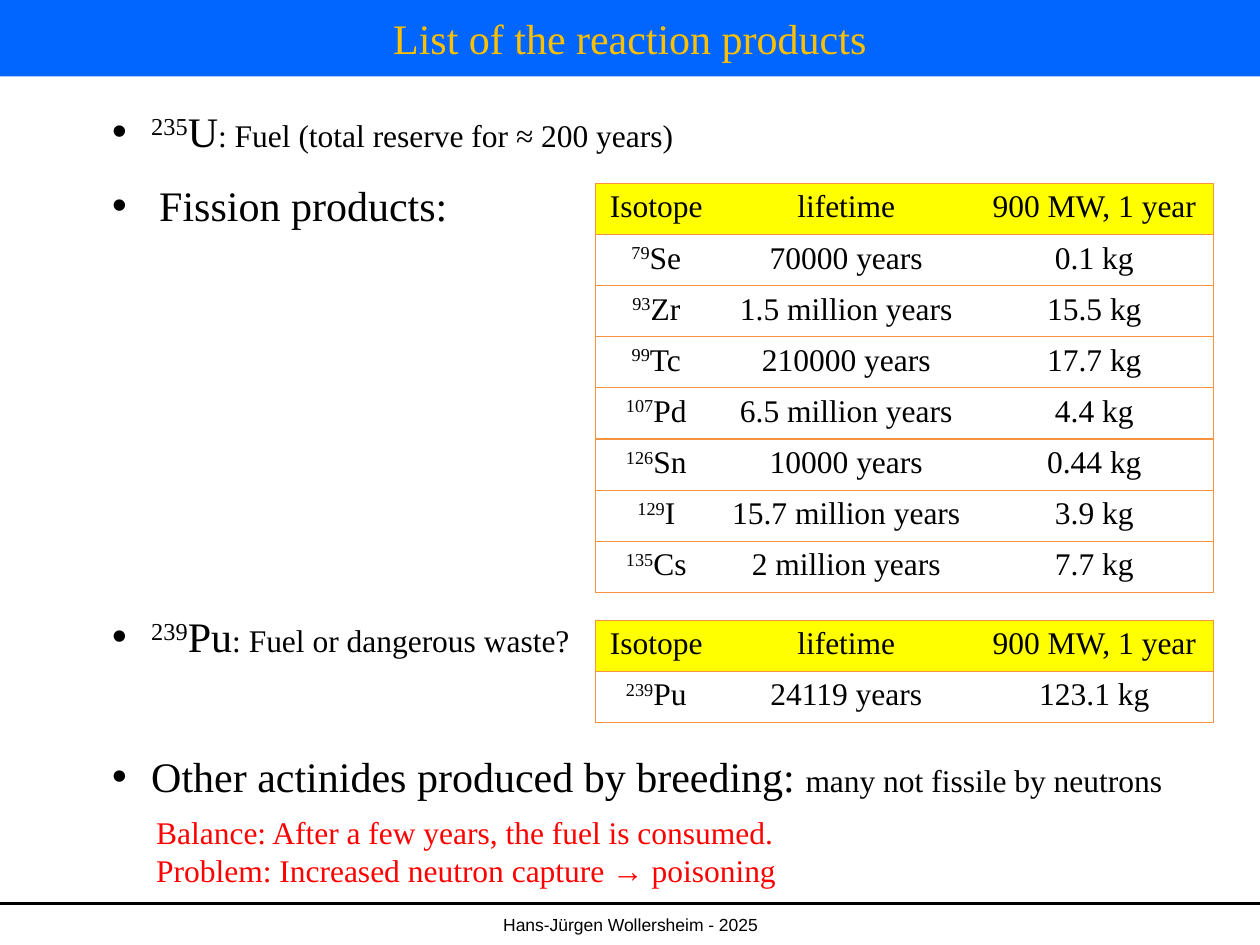
"""Build the slide listing the reaction products of nuclear fuel."""
from lxml import etree
from pptx import Presentation
from pptx.dml.color import RGBColor
from pptx.enum.shapes import MSO_CONNECTOR, MSO_SHAPE
from pptx.enum.text import MSO_ANCHOR, MSO_AUTO_SIZE, PP_ALIGN
from pptx.oxml.ns import qn
from pptx.util import Cm, Pt

STRAIGHT, RECTANGLE = MSO_CONNECTOR.STRAIGHT, MSO_SHAPE.RECTANGLE
MIDDLE, CENTER, FIT = MSO_ANCHOR.MIDDLE, PP_ALIGN.CENTER, MSO_AUTO_SIZE.SHAPE_TO_FIT_TEXT

BLACK = RGBColor(0x00, 0x00, 0x00)
BLUE = RGBColor(0x00, 0x66, 0xFF)
GOLD = RGBColor(0xFF, 0xC0, 0x00)
YELLOW = RGBColor(0xFF, 0xFF, 0x00)
ORANGE = RGBColor(0xF6, 0x92, 0x40)
RED = RGBColor(0xFF, 0x00, 0x00)
SERIF, SANS = "Times New Roman", "Arial"
LARGE, NORMAL, SMALL = 24, 18, 10

WIDTH, HEIGHT = 25.4, 19.05
TITLE = "List of the reaction products"
FOOTER = "Hans-Jürgen Wollersheim - 2025"
BULLET_LEFT, BULLET_HEIGHT = 2.01, 1.27
BULLETS = [
    (2.01, 12.07, 0.79, [("235", LARGE, True), ("U", LARGE, False),
                         (": Fuel (total reserve for ≈ 200 years)", NORMAL, False)]),
    (3.5, 7.34, 0.95, [("Fission products:", LARGE, False)]),
    (12.19, 9.96, 0.79, [("239", LARGE, True), ("Pu", LARGE, False),
                         (": Fuel or dangerous waste?", NORMAL, False)]),
    (15.01, 21.89, 0.79, [("Other actinides produced by breeding: ", LARGE, False),
                          ("many not fissile by neutrons", NORMAL, False)]),
]
CONCLUSIONS = [
    "Balance: After a few years, the fuel is consumed.",
    "Problem: Increased neutron capture → poisoning",
]
HEADER = ("Isotope", "lifetime", "900 MW, 1 year")
FISSION_PRODUCTS = [
    ("79", "Se", "70000 years", "0.1 kg"),
    ("93", "Zr", "1.5 million years", "15.5 kg"),
    ("99", "Tc", "210000 years", "17.7 kg"),
    ("107", "Pd", "6.5 million years", "4.4 kg"),
    ("126", "Sn", "10000 years", "0.44 kg"),
    ("129", "I", "15.7 million years", "3.9 kg"),
    ("135", "Cs", "2 million years", "7.7 kg"),
]
PLUTONIUM = [("239", "Pu", "24119 years", "123.1 kg")]
TABLES = [(3.7, FISSION_PRODUCTS), (12.5, PLUTONIUM)]
TABLE_LEFT, ROW_HEIGHT = 12.0, 1.03
COLUMN_WIDTHS = (2.46, 5.2, 4.8)


def add_run(paragraph, text, size, color=BLACK, font=SERIF, raised=False):
    run = paragraph.add_run()
    run.text = text
    run.font.name, run.font.size, run.font.bold = font, Pt(size), False
    run.font.color.rgb = color
    if raised:
        run.font._element.set("baseline", "30000")


def add_text_frame(slide, left, top, width, height):
    box = slide.shapes.add_textbox(Cm(left), Cm(top), Cm(width), Cm(height))
    box.text_frame.word_wrap = False
    box.text_frame.auto_size = FIT
    return box.text_frame


def add_title(slide):
    banner = slide.shapes.add_shape(RECTANGLE, 0, 0, Cm(WIDTH), Cm(1.54))
    banner.shadow.inherit = False
    banner.fill.solid()
    banner.fill.fore_color.rgb = BLUE
    banner.line.fill.background()
    banner.text_frame.vertical_anchor = MIDDLE
    heading = banner.text_frame.paragraphs[0]
    heading.alignment = CENTER
    add_run(heading, TITLE, LARGE, GOLD)


def add_footer(slide):
    rule = slide.shapes.add_connector(STRAIGHT, 0, Cm(18.21), Cm(WIDTH), Cm(18.21))
    rule.line.color.rgb = BLACK
    rule.line.width = Pt(1.5)
    etree.SubElement(rule._element.spPr, qn("a:effectLst"))
    frame = add_text_frame(slide, 0.02, 18.31, 25.38, 0.74)
    frame.word_wrap = True
    frame.auto_size = MSO_AUTO_SIZE.NONE
    frame.paragraphs[0].alignment = CENTER
    add_run(frame.paragraphs[0], FOOTER, SMALL, font=SANS)


def add_bullet(slide, top, width, indent, parts):
    paragraph = add_text_frame(slide, BULLET_LEFT, top, width, BULLET_HEIGHT).paragraphs[0]
    properties = paragraph._p.get_or_add_pPr()
    properties.set("marL", str(Cm(indent)))
    properties.set("indent", str(-Cm(indent)))
    etree.SubElement(properties, qn("a:buFont")).set("typeface", SANS)
    etree.SubElement(properties, qn("a:buChar")).set("char", "•")
    for text, size, raised in parts:
        add_run(paragraph, text, size, raised=raised)


def set_borders(cell, first, last):
    properties = cell._tc.get_or_add_tcPr()
    for side, drawn in (("L", first), ("R", last), ("T", True), ("B", True)):
        border = etree.SubElement(properties, qn(f"a:ln{side}"), w=str(Pt(0.75)))
        if drawn:
            fill = etree.SubElement(border, qn("a:solidFill"))
            etree.SubElement(fill, qn("a:srgbClr")).set("val", str(ORANGE))
        else:
            etree.SubElement(border, qn("a:noFill"))


def add_isotope_table(slide, top, isotopes):
    rows = [[[(title, False)] for title in HEADER]]
    rows += [[[(mass, True), (symbol, False)], [(lifetime, False)], [(amount, False)]]
             for mass, symbol, lifetime, amount in isotopes]
    table = slide.shapes.add_table(
        len(rows), len(HEADER), Cm(TABLE_LEFT), Cm(top),
        Cm(sum(COLUMN_WIDTHS)), Cm(ROW_HEIGHT * len(rows))).table
    table.horz_banding = False
    for column, width in zip(table.columns, COLUMN_WIDTHS):
        column.width = Cm(width)
    for r, row in enumerate(rows):
        table.rows[r].height = Cm(ROW_HEIGHT)
        for c, parts in enumerate(row):
            cell = table.cell(r, c)
            set_borders(cell, c == 0, c == len(HEADER) - 1)
            if r == 0:
                cell.fill.solid()
                cell.fill.fore_color.rgb = YELLOW
            else:
                cell.fill.background()
            paragraph = cell.text_frame.paragraphs[0]
            paragraph.alignment = CENTER
            for text, raised in parts:
                add_run(paragraph, text, NORMAL, raised=raised)


def add_conclusions(slide):
    frame = add_text_frame(slide, 2.9, 16.26, 13.08, 1.8)
    for i, sentence in enumerate(CONCLUSIONS):
        paragraph = frame.add_paragraph() if i else frame.paragraphs[0]
        add_run(paragraph, sentence, NORMAL, RED)


def main():
    presentation = Presentation()
    presentation.slide_width, presentation.slide_height = Cm(WIDTH), Cm(HEIGHT)
    slide = presentation.slides.add_slide(presentation.slide_layouts[6])
    add_footer(slide)
    add_title(slide)
    for bullet in BULLETS:
        add_bullet(slide, *bullet)
    for top, isotopes in TABLES:
        add_isotope_table(slide, top, isotopes)
    add_conclusions(slide)
    presentation.save("out.pptx")


if __name__ == "__main__":
    main()
